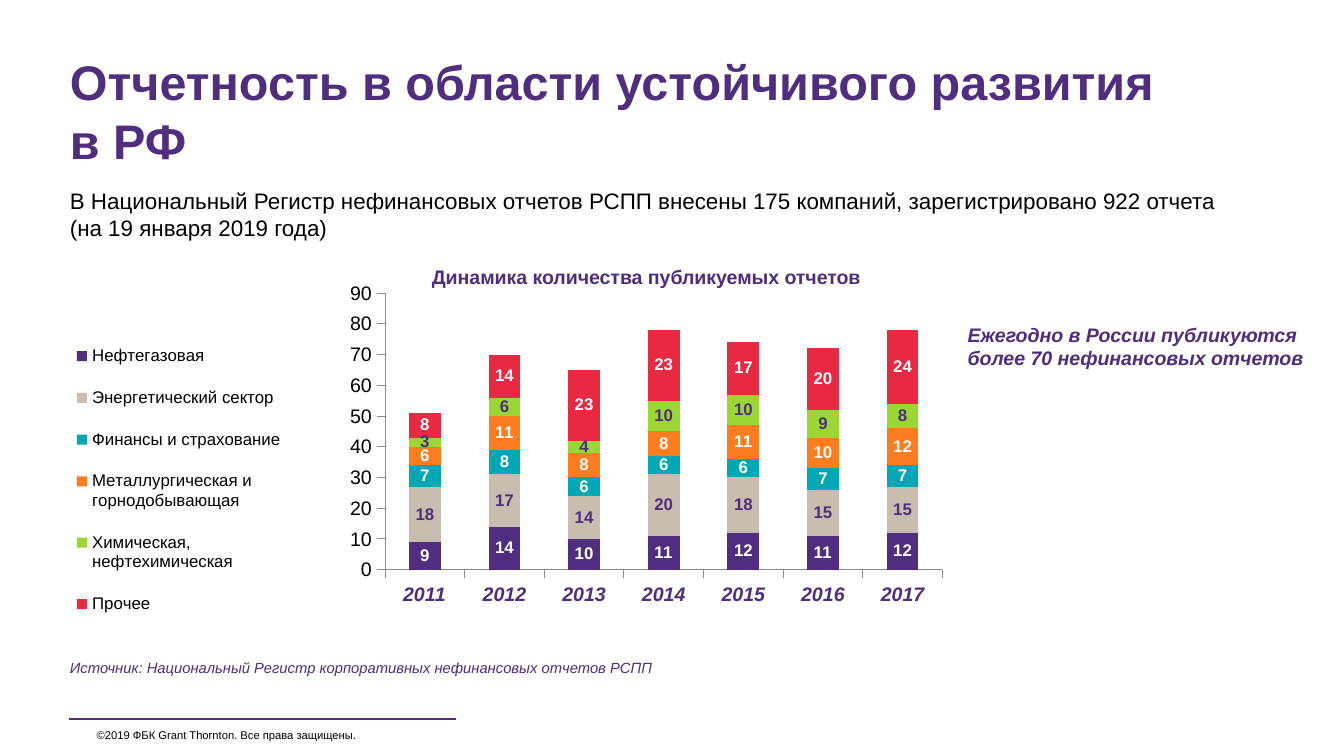
import pptx
import pptx.util
import pptx.dml.color
import pptx.chart.data
import pptx.enum.chart
import pptx.enum.shapes
import pptx.enum.text
import pptx.oxml
import pptx.oxml.ns

Inches, Pt = pptx.util.Inches, pptx.util.Pt
RGB = pptx.dml.color.RGBColor
ENUM = pptx.enum.chart
ALIGN = pptx.enum.text.PP_ALIGN
ANCHOR = pptx.enum.text.MSO_ANCHOR

PURPLE = RGB(0x4F, 0x2D, 0x7F)
SAND = RGB(0xC8, 0xBE, 0xAF)
TEAL = RGB(0x00, 0xA7, 0xB5)
ORANGE = RGB(0xFF, 0x7D, 0x1E)
GREEN = RGB(0x9B, 0xD7, 0x32)
RED = RGB(0xE9, 0x28, 0x41)
GREY = RGB(0x8C, 0x8C, 0x8C)
BLACK = RGB(0, 0, 0)
WHITE = RGB(0xFF, 0xFF, 0xFF)


def style(font, size, color, **form):
    font.color.rgb = color
    for key, val in {"name": "Arial", "size": Pt(size), **form}.items():
        setattr(font, key, val)


def place(parent, left, top, width, height, inner=False):
    tags = {"xMode": "edge", "yMode": "edge", "x": left, "y": top, "w": width, "h": height}
    if inner:
        tags = {"layoutTarget": "inner", **tags}
    body = "".join(f'<c:{tag} val="{val}"/>' for tag, val in tags.items())
    space = pptx.oxml.ns.nsdecls("c")
    node = pptx.oxml.parse_xml(
        f"<c:layout {space}><c:manualLayout>{body}</c:manualLayout></c:layout>")
    for old in parent.findall(pptx.oxml.ns.qn("c:layout")):
        parent.remove(old)
    return node


deck = pptx.Presentation()
deck.slide_width = Inches(10)
deck.slide_height = deck.slide_width * 9 // 16
slide = deck.slides.add_slide(deck.slide_layouts[5])

title = slide.shapes.title
title.left, title.top = Inches(0.52), Inches(0.39)
title.width, title.height = Inches(8.97), Inches(0.92)
frame = title.text_frame
frame.margin_left = frame.margin_right = frame.margin_top = frame.margin_bottom = 0
frame.vertical_anchor = ANCHOR.TOP
frame.auto_size = pptx.enum.text.MSO_AUTO_SIZE.NONE
line = frame.paragraphs[0]
line.alignment = ALIGN.LEFT
line.add_run().text = "Отчетность в области устойчивого развития"
line.add_line_break()
line.add_run().text = "в РФ"
for run in line.runs:
    style(run.font, 26, PURPLE, bold=True)

data = pptx.chart.data.CategoryChartData()
data.categories = [str(year) for year in range(2011, 2018)]
sectors = [
    ("Нефтегазовая", PURPLE, WHITE, (9, 14, 10, 11, 12, 11, 12)),
    ("Энергетический сектор", SAND, PURPLE, (18, 17, 14, 20, 18, 15, 15)),
    ("Финансы и страхование", TEAL, WHITE, (7, 8, 6, 6, 6, 7, 7)),
    ("Металлургическая и горнодобывающая", ORANGE, WHITE, (6, 11, 8, 8, 11, 10, 12)),
    ("Химическая, нефтехимическая", GREEN, PURPLE, (3, 6, 4, 10, 10, 9, 8)),
    ("Прочее", RED, WHITE, (8, 14, 23, 23, 17, 20, 24)),
]
for name, fill, ink, vals in sectors:
    data.add_series(name, vals)
chart = slide.shapes.add_chart(
    ENUM.XL_CHART_TYPE.COLUMN_STACKED,
    Inches(0.22), Inches(1.92), Inches(7.15), Inches(2.9), data).chart
chart.has_title = False
style(chart.font, 10.5, BLACK)
plot = chart.plots[0]
plot.gap_width, plot.overlap, plot.vary_by_categories = 150, 100, False
for bars, (name, fill, ink, vals) in zip(plot.series, sectors):
    bars.format.fill.solid()
    bars.format.fill.fore_color.rgb = fill
    tags = bars.data_labels
    tags.show_value = True
    tags.position = ENUM.XL_LABEL_POSITION.CENTER
    style(tags.font, 9, ink, bold=True)

years, count = chart.category_axis, chart.value_axis
for axis in (years, count):
    axis.has_major_gridlines = False
    axis.major_tick_mark = ENUM.XL_TICK_MARK.OUTSIDE
    axis.format.line.color.rgb = GREY
    axis.format.line.width = Pt(0.5)
style(years.tick_labels.font, 10.5, PURPLE, bold=True, italic=True)
style(count.tick_labels.font, 10.5, BLACK)
count.minimum_scale, count.maximum_scale, count.major_unit = 0, 90, 10

chart.has_legend = True
legend = chart.legend
legend.position = ENUM.XL_LEGEND_POSITION.BOTTOM
legend.include_in_layout = False
style(legend.font, 9, BLACK)
key = legend._element
key.find(pptx.oxml.ns.qn("c:legendPos")).addnext(place(key, 0.04, 0.17, 0.23, 0.8))
area = chart._chartSpace.chart.plotArea
area.insert(0, place(area, 0.37, 0.09, 0.58, 0.71, inner=True))

texts = [
    ("В Национальный Регистр нефинансовых отчетов РСПП внесены 175 компаний, "
     "зарегистрировано 922 отчета (на 19 января 2019 года)",
     (0.52, 1.39, 8.66, 0.51), 12, BLACK, {}, ALIGN.LEFT, ANCHOR.TOP),
    ("Ежегодно в России публикуются более 70 нефинансовых отчетов",
     (7.2, 2.4, 2.58, 0.35), 10.5, PURPLE, {"bold": True, "italic": True},
     ALIGN.LEFT, ANCHOR.TOP),
    ("Динамика количества публикуемых отчетов ",
     (2.72, 1.93, 4.22, 0.25), 10.5, PURPLE, {"bold": True}, ALIGN.CENTER, ANCHOR.MIDDLE),
    ("Источник: Национальный Регистр корпоративных нефинансовых отчетов РСПП",
     (0.52, 4.9, 4.62, 0.17), 7.9, PURPLE, {"italic": True}, ALIGN.LEFT, ANCHOR.TOP),
    ("©2019 ФБК Grant Thornton. Все права защищены.",
     (0.72, 5.37, 2.87, 0.2), 6, BLACK, {}, ALIGN.LEFT, ANCHOR.MIDDLE),
]
for words, spot, size, color, form, align, anchor in texts:
    frame = slide.shapes.add_textbox(*map(Inches, spot)).text_frame
    for key, val in {"margin_left": 0, "margin_right": 0, "margin_top": 0,
                     "margin_bottom": 0, "word_wrap": True,
                     "vertical_anchor": anchor}.items():
        setattr(frame, key, val)
    line = frame.paragraphs[0]
    line.alignment = align
    run = line.add_run()
    run.text = words
    style(run.font, size, color, **form)

rule = slide.shapes.add_connector(
    pptx.enum.shapes.MSO_CONNECTOR.STRAIGHT,
    Inches(0.51), Inches(5.35), Inches(3.39), Inches(5.35))
rule.line.color.rgb = PURPLE
rule.line.width = Pt(1.5)
rule._element.spPr.append(pptx.oxml.parse_xml(
    f'<a:effectLst {pptx.oxml.ns.nsdecls("a")}/>'))

deck.save("out.pptx")
